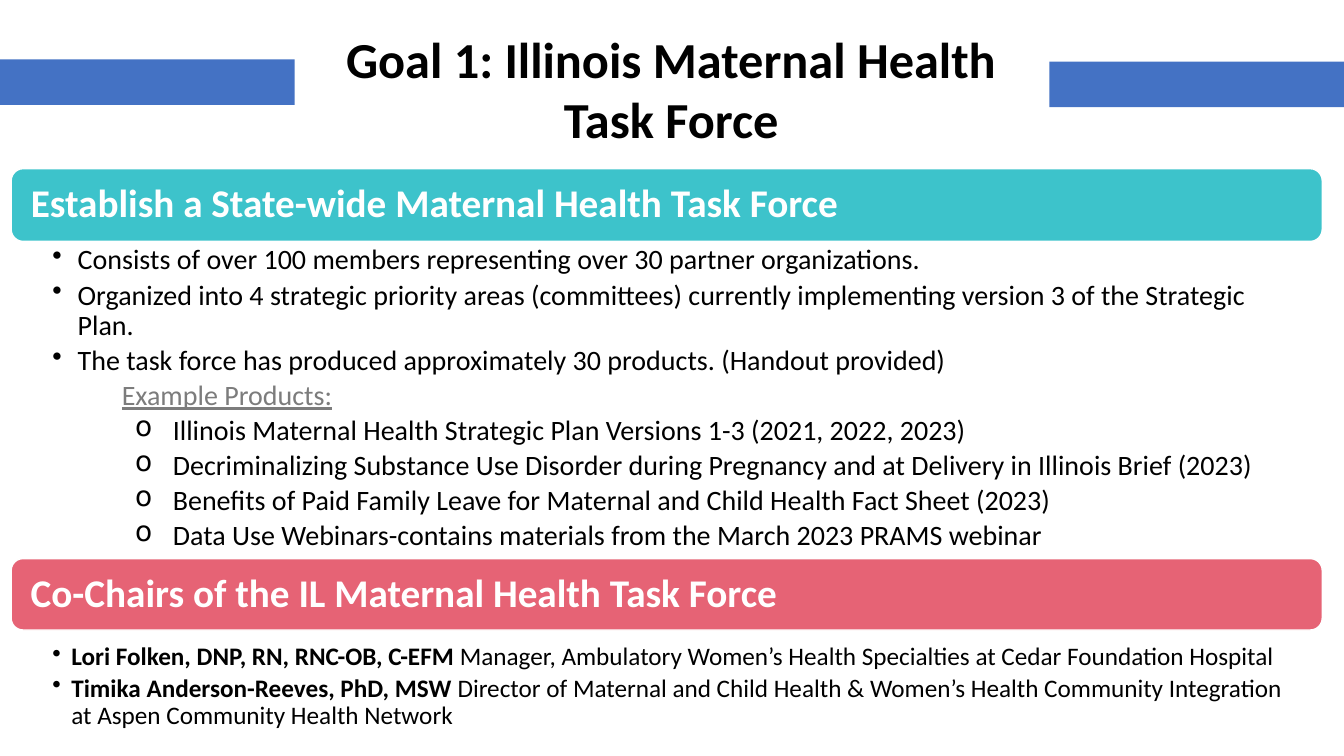
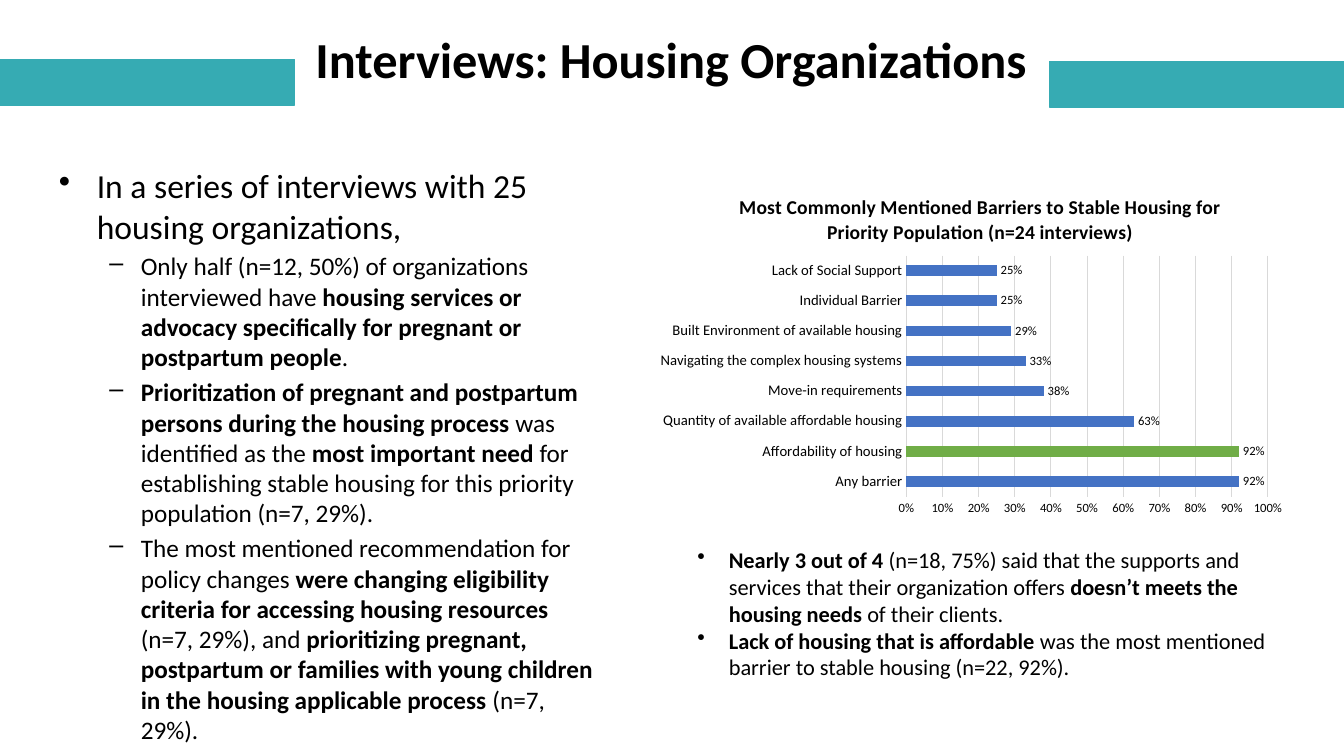
from lxml import etree
from pptx import Presentation
from pptx.chart.data import CategoryChartData
from pptx.dml.color import RGBColor
from pptx.enum.chart import XL_CHART_TYPE, XL_LABEL_POSITION, XL_TICK_MARK
from pptx.enum.shapes import MSO_SHAPE
from pptx.enum.text import MSO_ANCHOR, PP_ALIGN
from pptx.oxml.ns import qn
from pptx.util import Pt

FONT = "Calibri"
BLACK, WHITE, GRAY, GRID = "000000", "FFFFFF", "7C7C7C", "D9D9D9"
BLUE, TEAL, GREEN = "4472C4", "36ABB3", "70AD47"
TURQUOISE, ROSE = "3DC3CB", "E66375"


def color(value):
    return RGBColor.from_string(value)


def set_font(font, size, hex_color=BLACK, bold=False):
    font.name = FONT
    font.size = Pt(size)
    font.bold = bold
    font.color.rgb = color(hex_color)


def add_box(slide, kind, box, fill, line=None):
    shape = slide.shapes.add_shape(kind, *map(Pt, box))
    shape.shadow.inherit = False
    shape.fill.solid()
    shape.fill.fore_color.rgb = color(fill)
    if line:
        shape.line.color.rgb = color(line)
        shape.line.width = Pt(1)
    else:
        shape.line.fill.background()
    return shape


def set_insets(frame, left, top, right, bottom):
    frame.margin_left, frame.margin_top = Pt(left), Pt(top)
    frame.margin_right, frame.margin_bottom = Pt(right), Pt(bottom)


def add_text(slide, box, insets=(7.2, 3.6, 7.2, 3.6)):
    frame = slide.shapes.add_textbox(*map(Pt, box)).text_frame
    frame.word_wrap = True
    set_insets(frame, *insets)
    return frame


def add_item(frame, text, size, margin, indent, bullet="•", hex_color=BLACK,
             before=0, after=0, spacing=None):
    """Add a paragraph; parts between double asterisks are bold."""
    first = not frame.paragraphs[0].runs
    paragraph = frame.paragraphs[0] if first else frame.add_paragraph()
    properties = paragraph._p.get_or_add_pPr()
    properties.set("marL", str(Pt(margin)))
    properties.set("indent", str(Pt(indent)))
    if bullet:
        etree.SubElement(properties, qn("a:buChar")).set("char", bullet)
    paragraph.space_before = Pt(0 if first else before)
    paragraph.space_after = Pt(after)
    if spacing:
        paragraph.line_spacing = spacing
    set_font(paragraph.font, size, hex_color)
    for index, part in enumerate(text.split("**")):
        if part:
            run = paragraph.add_run()
            run.text = part
            if index % 2:
                run.font.bold = True
    return paragraph


def add_header(slide, title, fill, line=None):
    # Side bands
    for left, top in ((0, 42.5), (749.5, 44)):
        add_box(slide, MSO_SHAPE.RECTANGLE, (left, top, 210.5, 32.5), fill, line)
    # Title
    paragraph = add_text(slide, (211, 16.5, 537, 94)).paragraphs[0]
    paragraph.text = title
    paragraph.alignment = PP_ALIGN.CENTER
    set_font(paragraph.font, 36, bold=True)


def add_banner(slide, text, box, fill):
    frame = add_box(slide, MSO_SHAPE.ROUNDED_RECTANGLE, box, fill, WHITE).text_frame
    frame.word_wrap = True
    frame.vertical_anchor = MSO_ANCHOR.MIDDLE
    set_insets(frame, 11.5, 8, 11.5, 8)
    paragraph = frame.paragraphs[0]
    paragraph.text = text
    paragraph.alignment = PP_ALIGN.LEFT
    paragraph.line_spacing = 0.9
    set_font(paragraph.font, 28, WHITE, bold=True)


def set_layout(element, position, inner=False, **fractions):
    """Place a chart part by fractions of the chart's box."""
    for old in element.findall(qn("c:layout")):
        element.remove(old)
    layout = etree.Element(qn("c:layout"))
    manual = etree.SubElement(layout, qn("c:manualLayout"))
    settings = {"layoutTarget": "inner"} if inner else {}
    settings.update(xMode="edge", yMode="edge", **fractions)
    for name, value in settings.items():
        etree.SubElement(manual, qn("c:" + name)).set("val", str(value))
    element.insert(position, layout)


def add_barrier_chart(slide, box):
    barriers = {
        "Any barrier": 0.92,
        "Affordability of housing": 0.92,
        "Quantity of available affordable housing": 0.63,
        "Move-in requirements": 0.38,
        "Navigating the complex housing systems": 0.33,
        "Built Environment of available housing": 0.29,
        "Individual Barrier": 0.25,
        "Lack of Social Support": 0.25,
    }
    data = CategoryChartData(number_format="0%")
    data.categories = list(barriers)
    data.add_series("Series 1", list(barriers.values()))
    chart = slide.shapes.add_chart(
        XL_CHART_TYPE.BAR_CLUSTERED, *map(Pt, box), data).chart
    set_font(chart.font, 10)
    chart.has_legend = False

    # Title
    chart.has_title = True
    paragraph = chart.chart_title.text_frame.paragraphs[0]
    paragraph.text = ("Most Commonly Mentioned Barriers to Stable Housing for "
                      "Priority Population (n=24 interviews)")
    set_font(paragraph.font, 14, bold=True)
    space = chart._chartSpace
    set_layout(space.find(".//" + qn("c:title")), 1, x=0.15, y=0.04)
    set_layout(space.find(".//" + qn("c:plotArea")), 0, inner=True,
               x=0.41, y=0.23, w=0.55, h=0.7)

    # Bars and labels
    plot = chart.plots[0]
    plot.gap_width = 182
    plot.vary_by_categories = False
    series = plot.series[0]
    for part, fill in ((series, BLUE), (series.points[1], GREEN)):
        part.format.fill.solid()
        part.format.fill.fore_color.rgb = color(fill)
    labels = series.data_labels
    labels.show_value = True
    labels.position = XL_LABEL_POSITION.OUTSIDE_END
    labels.number_format = "0%"
    labels.number_format_is_linked = False
    set_font(labels.font, 9)

    # Axes
    categories, values = chart.category_axis, chart.value_axis
    for axis, size in ((categories, 10.5), (values, 9)):
        axis.major_tick_mark = axis.minor_tick_mark = XL_TICK_MARK.NONE
        set_font(axis.tick_labels.font, size)
    values.minimum_scale, values.maximum_scale, values.major_unit = 0, 1, 0.1
    values.tick_labels.number_format = "0%"
    values.tick_labels.number_format_is_linked = False
    values.format.line.fill.background()
    for line in (categories.format.line, values.major_gridlines.format.line):
        line.color.rgb = color(GRID)
        line.width = Pt(0.75)


def build_task_force(slide):
    add_header(slide, "Goal 1: Illinois Maternal Health Task Force", BLUE)
    left, width = 8, 936.5

    # Task force
    add_banner(slide, "Establish a State-wide Maternal Health Task Force",
               (left, 120.5, width, 52), TURQUOISE)
    frame = add_text(slide, (left, 173.5, width, 232.5), (29.5, 2, 11.5, 2))
    style = {"size": 20, "after": 3.5, "spacing": 0.9}
    for text in (
        "Consists of over 100 members representing over 30 partner organizations.",
        "Organized into 4 strategic priority areas (committees) currently "
        "implementing version 3 of the Strategic Plan.",
        "The task force has produced approximately 30 products. (Handout provided)",
    ):
        add_item(frame, text, margin=18, indent=-18, **style)
    heading = add_item(frame, "Example Products:", margin=0, indent=49.5,
                       bullet=None, hex_color=GRAY, **style)
    heading.font.underline = True
    for text in (
        "Illinois Maternal Health Strategic Plan Versions 1-3 (2021, 2022, 2023)",
        "Decriminalizing Substance Use Disorder during Pregnancy and at Delivery "
        "in Illinois Brief (2023)",
        "Benefits of Paid Family Leave for Maternal and Child Health Fact Sheet (2023)",
        "Data Use Webinars-contains materials from the March 2023 PRAMS webinar",
    ):
        add_item(frame, text, margin=86, indent=-27, bullet="o", **style)

    # Co-chairs
    add_banner(slide, "Co-Chairs of the IL Maternal Health Task Force",
               (left, 399, width, 51), ROSE)
    frame = add_text(slide, (left, 458, width, 73), (29.5, 2, 10, 2))
    for text in (
        "**Lori Folken, DNP, RN, RNC-OB, C-EFM **Manager, Ambulatory Women’s "
        "Health Specialties at Cedar Foundation Hospital",
        "**Timika Anderson-Reeves, PhD, MSW **Director of Maternal and Child Health "
        "& Women’s Health Community Integration at Aspen Community Health Network",
    ):
        add_item(frame, text, 18, 13.5, -13.5, after=3, spacing=0.9)


def build_interviews(slide):
    add_header(slide, "Interviews: Housing Organizations", TEAL, TEAL)

    # Findings
    frame = add_text(slide, (35, 114.5, 402.5, 436))
    add_item(frame, "In a series of interviews with 25 housing organizations,",
             24, 27, -27)
    for text in (
        "Only half (n=12, 50%) of organizations interviewed have **housing services "
        "or advocacy specifically for pregnant or postpartum people**.",
        "**Prioritization of pregnant and postpartum persons during the housing "
        "process **was identified as the **most important need **for establishing "
        "stable housing for this priority population (n=7, 29%).",
        "The most mentioned recommendation for policy changes **were changing "
        "eligibility criteria for accessing housing resources **(n=7, 29%), and "
        "**prioritizing pregnant, postpartum or families with young children in "
        "the housing applicable process **(n=7, 29%).",
    ):
        add_item(frame, text, 18, 58.5, -22.5, "–", before=3.5)

    # Barriers
    add_barrier_chart(slide, (455, 126, 469.5, 246))
    frame = add_text(slide, (455, 386.5, 469.5, 126))
    for text in (
        "**Nearly 3 out of 4 **(n=18, 75%) said that the supports and services that "
        "their organization offers **doesn’t meets the housing needs **of their clients.",
        "**Lack of housing that is affordable **was the most mentioned barrier to "
        "stable housing (n=22, 92%).",
    ):
        add_item(frame, text, 16, 58.5, -22.5)


def main():
    presentation = Presentation()
    presentation.slide_width, presentation.slide_height = Pt(960), Pt(540)
    for build in (build_task_force, build_interviews):
        build(presentation.slides.add_slide(presentation.slide_layouts[6]))
    presentation.save("out.pptx")


if __name__ == "__main__":
    main()
